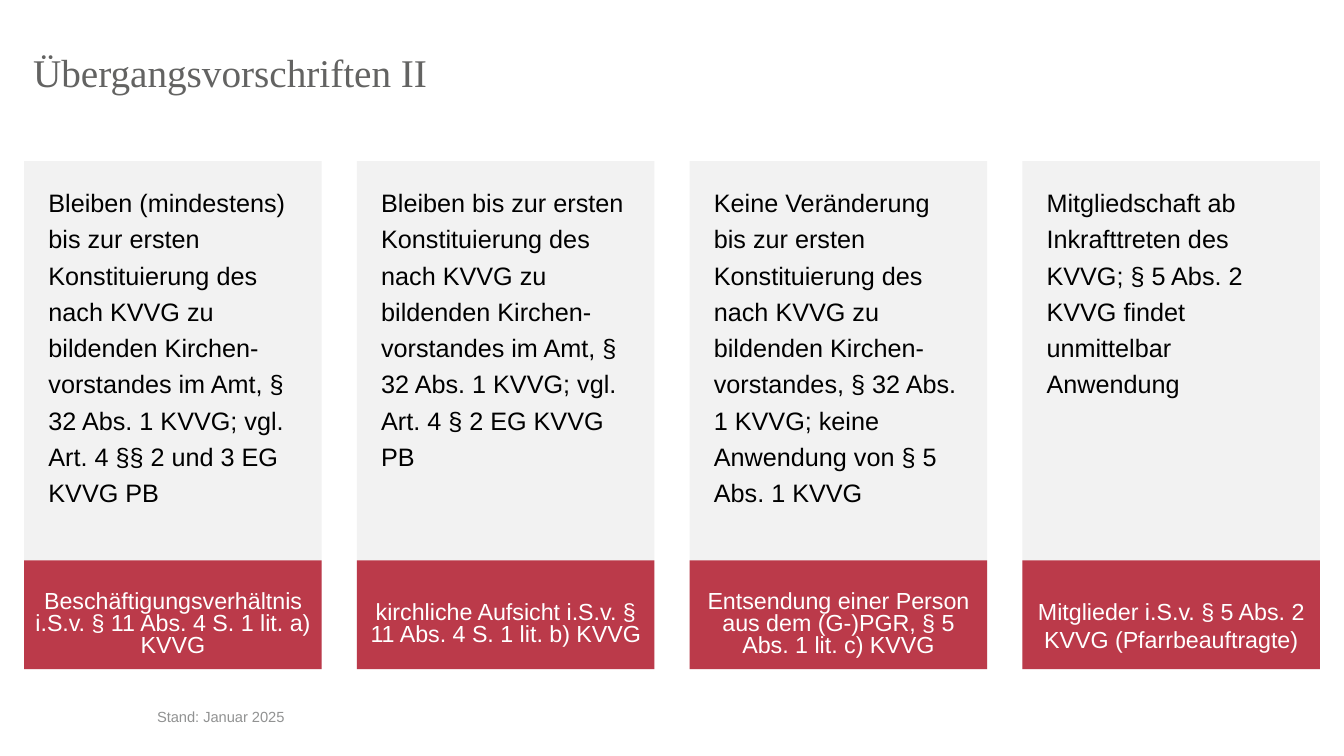
from lxml import etree
from pptx import Presentation
from pptx.dml.color import RGBColor
from pptx.enum.shapes import MSO_SHAPE
from pptx.enum.text import MSO_ANCHOR, PP_ALIGN
from pptx.oxml.ns import qn
from pptx.util import Inches, Pt

RECT = MSO_SHAPE.RECTANGLE
TOP, MIDDLE, BOTTOM = MSO_ANCHOR.TOP, MSO_ANCHOR.MIDDLE, MSO_ANCHOR.BOTTOM
LEFT, CENTER = PP_ALIGN.LEFT, PP_ALIGN.CENTER
COLORS = {"card": "F2F2F2", "label": "AE0C21", "body": "000000",
          "white": "FFFFFF", "title": "636362", "footer": "919292"}


def set_text(sp, text, size, color, anchor, align=LEFT, spacing=1.0,
             font="Arial", insets=(0.1, 0.05, 0.1, 0.05)):
    tf = sp.text_frame
    tf.word_wrap = True
    tf.vertical_anchor = anchor
    tf.margin_left, tf.margin_top, tf.margin_right, tf.margin_bottom = map(Inches, insets)
    p = tf.paragraphs[0]
    p.text = text
    p.alignment = align
    p.line_spacing = spacing
    r = p.runs[0]
    r.font.name = font
    r.font.size = Pt(size)
    r.font.color.rgb = RGBColor.from_string(COLORS[color])


def add_box(s, x, y, w, h, color):
    sp = s.shapes.add_shape(RECT, Inches(x), Inches(y), Inches(w), Inches(h))
    sp.shadow.inherit = False
    sp.fill.solid()
    sp.fill.fore_color.rgb = RGBColor.from_string(COLORS[color])
    sp.line.fill.background()
    return sp


prs = Presentation()
prs.slide_width, prs.slide_height = Inches(13.33), Inches(7.5)
s = prs.slides.add_slide(prs.slide_layouts[6])

# Title
title = s.shapes.add_textbox(Inches(0.23), Inches(0.23), Inches(11.13), Inches(1.03))
set_text(title, "Übergangsvorschriften II", 28, "title", MIDDLE,
         spacing=0.9, font="Times New Roman")

# Cards: body text, label, label line spacing
cards = [
    ("Bleiben (mindestens) bis zur ersten Konstituierung des nach KVVG zu bildenden "
     "Kirchen-vorstandes im Amt, § 32 Abs. 1 KVVG; vgl. Art. 4 §§ 2 und 3 EG KVVG PB",
     "Beschäftigungsverhältnis i.S.v. § 11 Abs. 4 S. 1 lit. a) KVVG", 0.8),
    ("Bleiben bis zur ersten Konstituierung des nach KVVG zu bildenden "
     "Kirchen-vorstandes im Amt, § 32 Abs. 1 KVVG; vgl. Art. 4 § 2 EG KVVG PB",
     "kirchliche Aufsicht i.S.v. § 11 Abs. 4 S. 1 lit. b) KVVG", 0.8),
    ("Keine Veränderung bis zur ersten Konstituierung des nach KVVG zu bildenden "
     "Kirchen-vorstandes, § 32 Abs. 1 KVVG; keine Anwendung von § 5 Abs. 1 KVVG",
     "Entsendung einer Person aus dem (G-)PGR, § 5 Abs. 1 lit. c) KVVG", 0.8),
    ("Mitgliedschaft ab Inkrafttreten des KVVG; § 5 Abs. 2 KVVG findet "
     "unmittelbar Anwendung",
     "Mitglieder i.S.v. § 5 Abs. 2 KVVG (Pfarrbeauftragte)", 1.0),
]
CARD_LEFT, CARD_PITCH, CARD_WIDTH = 0.24, 3.3, 2.95

for i, (body, label, spacing) in enumerate(cards):
    x = CARD_LEFT + i * CARD_PITCH
    card = add_box(s, x, 1.6, CARD_WIDTH, 5.04, "card")
    set_text(card, body, 18, "body", TOP, spacing=1.2, insets=(0.24, 0.2, 0.24, 0.2))

    band = add_box(s, x, 5.56, CARD_WIDTH, 1.08, "label")
    set_text(band, label, 16.6, "white", MIDDLE, CENTER, spacing,
             insets=(0.08, 0.28, 0.08, 0.08))
    # 80 % opacity
    rgb = band.fill._xPr.find(qn("a:solidFill"))[0]
    etree.SubElement(rgb, qn("a:alpha")).set("val", "80000")

# Footer
footer = s.shapes.add_textbox(Inches(1.46), Inches(6.91), Inches(11.64), Inches(0.34))
set_text(footer, "Stand: Januar 2025", 10.5, "footer", BOTTOM)

prs.save("out.pptx")
